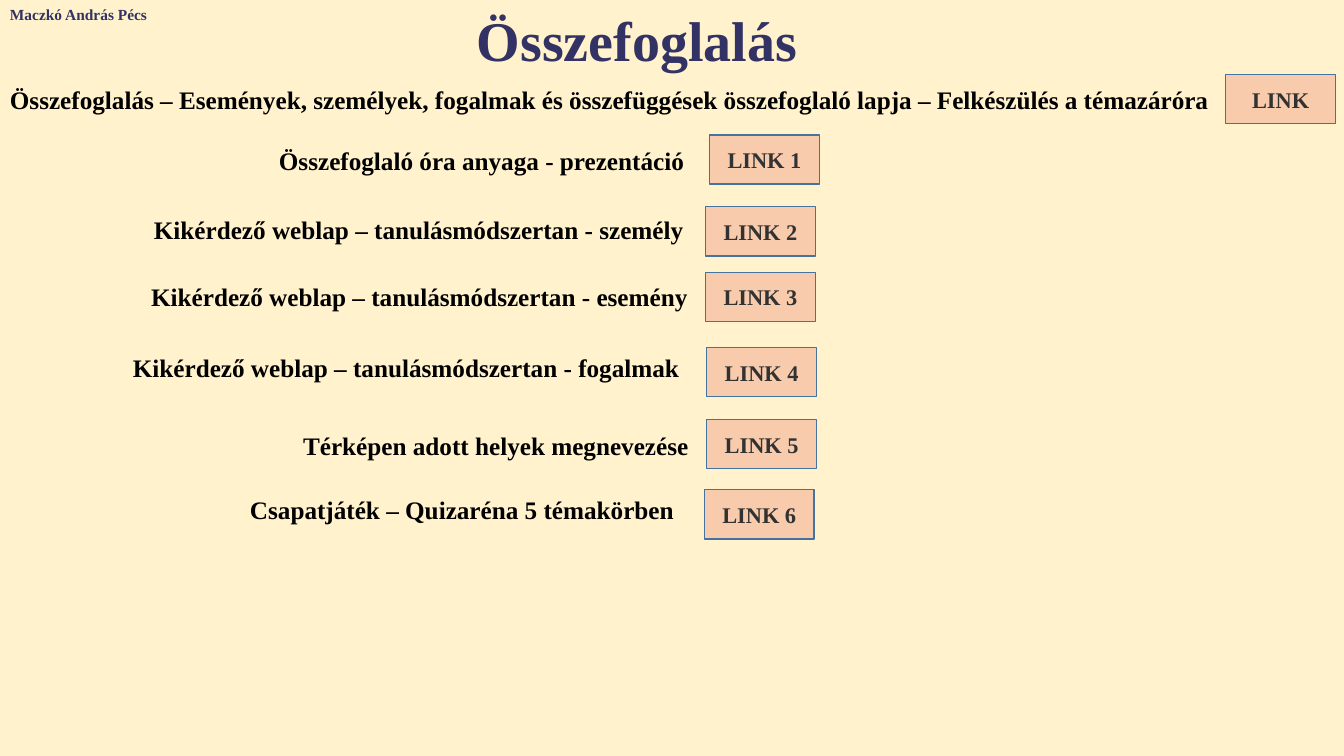
from dataclasses import dataclass

from pptx import Presentation
from pptx.dml.color import RGBColor
from pptx.enum.shapes import MSO_SHAPE
from pptx.enum.text import MSO_ANCHOR, MSO_AUTO_SIZE, PP_ALIGN
from pptx.shapes.base import BaseShape
from pptx.slide import Slide
from pptx.util import Cm, Pt

FONT = "Times New Roman"
NAVY, BLACK, CHARCOAL = "323264", "000000", "323232"
CREAM, PEACH, BLUE = "FFF2CC", "F8CBAD", "43739E"
LABEL_HEIGHT = 1.02
BUTTON_WIDTH, BUTTON_HEIGHT = 2.77, 1.24


@dataclass(frozen=True)
class LinkRow:
    """A label and its button, with places in centimetres."""
    label: str
    left: float
    top: float
    width: float
    button: str
    button_left: float
    button_top: float


ROWS = [
    LinkRow("Összefoglalás – Események, személyek, fogalmak és összefüggések "
            "összefoglaló lapja – Felkészülés a témazáróra",
            0, 2.01, 30.89, "LINK", 30.89, 1.88),
    LinkRow("Összefoglaló óra anyaga - prezentáció",
            6.78, 3.53, 11.2, "LINK 1", 17.88, 3.4),
    LinkRow("Kikérdező weblap – tanulásmódszertan - személy",
            3.63, 5.28, 14.25, "LINK 2", 17.78, 5.21),
    LinkRow("Kikérdező weblap – tanulásmódszertan - esemény",
            3.56, 6.96, 14.25, "LINK 3", 17.78, 6.86),
    LinkRow("Kikérdező weblap – tanulásmódszertan - fogalmak",
            3.1, 8.76, 14.68, "LINK 4", 17.81, 8.76),
    LinkRow("Térképen adott helyek megnevezése",
            7.39, 10.72, 10.44, "LINK 5", 17.81, 10.57),
    LinkRow("Csapatjáték – Quizaréna 5 témakörben",
            6.05, 12.34, 11.46, "LINK 6", 17.75, 12.34),
]


def rgb(color: str) -> RGBColor:
    return RGBColor.from_string(color)


def write(sp: BaseShape, text: str, *, size: float, color: str,
          align: PP_ALIGN = PP_ALIGN.LEFT,
          anchor: MSO_ANCHOR = MSO_ANCHOR.TOP,
          fit: MSO_AUTO_SIZE = MSO_AUTO_SIZE.SHAPE_TO_FIT_TEXT) -> None:
    tf = sp.text_frame
    tf.word_wrap = True
    tf.auto_size = fit
    tf.vertical_anchor = anchor
    p = tf.paragraphs[0]
    p.alignment = align
    r = p.add_run()
    r.text = text
    r.font.name = FONT
    r.font.size = Pt(size)
    r.font.bold = True
    r.font.color.rgb = rgb(color)


def add_text(s: Slide, text: str, left: float, top: float, width: float,
             height: float, *, size: float, color: str) -> None:
    sp = s.shapes.add_textbox(Cm(left), Cm(top), Cm(width), Cm(height))
    write(sp, text, size=size, color=color)


def add_button(s: Slide, text: str, left: float, top: float) -> None:
    sp = s.shapes.add_shape(MSO_SHAPE.RECTANGLE, Cm(left), Cm(top),
                            Cm(BUTTON_WIDTH), Cm(BUTTON_HEIGHT))
    sp.shadow.inherit = False
    sp.fill.solid()
    sp.fill.fore_color.rgb = rgb(PEACH)
    sp.line.color.rgb = rgb(BLUE)
    sp.line.width = Pt(1)
    write(sp, text, size=16, color=CHARCOAL, align=PP_ALIGN.CENTER,
          anchor=MSO_ANCHOR.MIDDLE, fit=MSO_AUTO_SIZE.NONE)


def add_title(s: Slide, text: str) -> None:
    title = s.shapes.title
    title.left, title.top = Cm(4.67), Cm(0)
    title.width, title.height = Cm(22.76), Cm(1.96)
    write(title, text, size=40, color=NAVY, align=PP_ALIGN.CENTER)


def main() -> None:
    prs = Presentation()
    prs.slide_width, prs.slide_height = Cm(33.87), Cm(19.05)
    s = prs.slides.add_slide(prs.slide_layouts.get_by_name("Title Only"))
    s.background.fill.solid()
    s.background.fill.fore_color.rgb = rgb(CREAM)

    add_title(s, "Összefoglalás")
    add_text(s, "Maczkó András Pécs", 0, 0, 4.04, 0.74, size=11, color=NAVY)
    for row in ROWS:
        add_text(s, row.label, row.left, row.top, row.width, LABEL_HEIGHT,
                 size=18, color=BLACK)
        add_button(s, row.button, row.button_left, row.button_top)
    prs.save("out.pptx")


if __name__ == "__main__":
    main()
